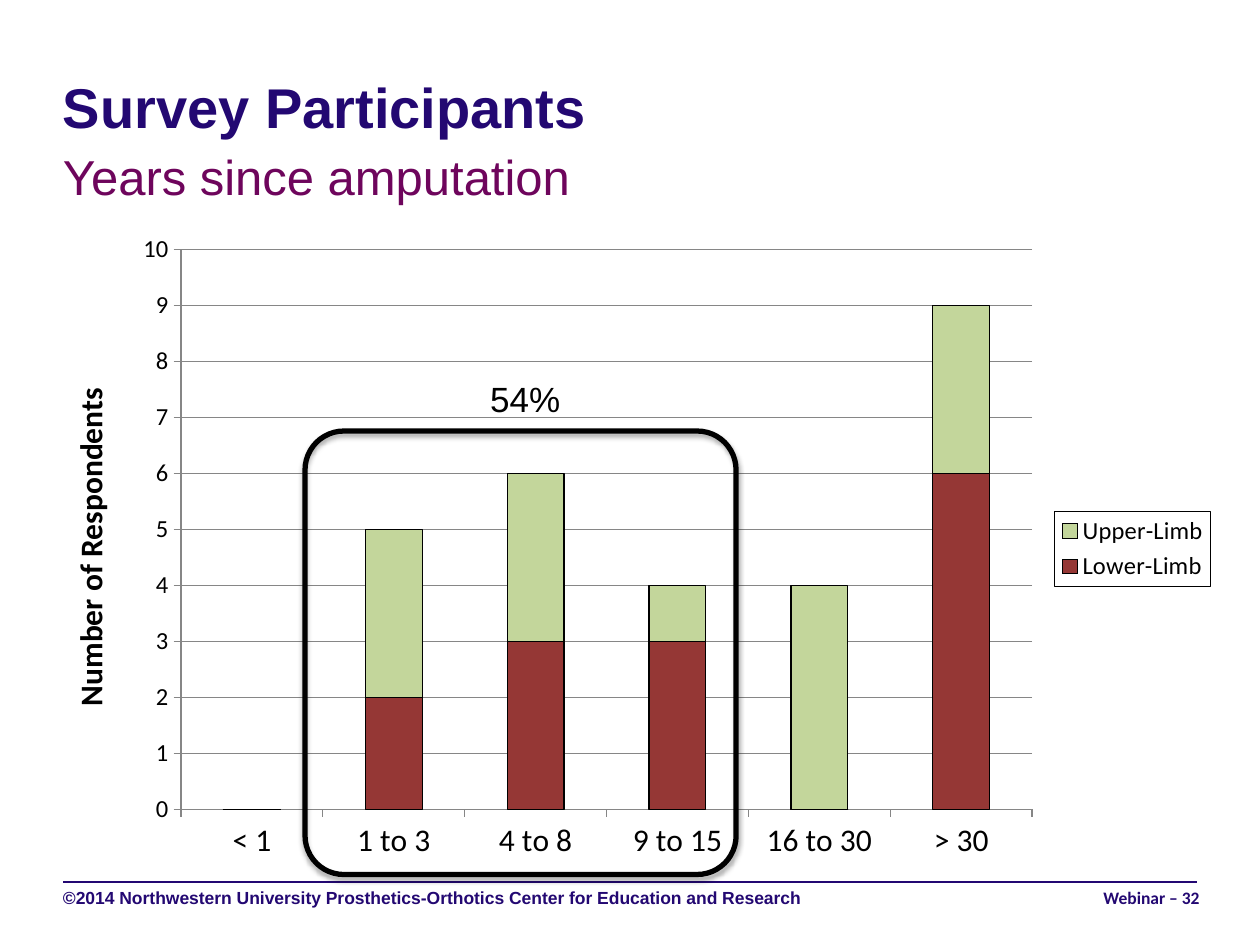
from lxml import etree
from pptx import Presentation
from pptx.chart.data import CategoryChartData
from pptx.dml.color import RGBColor
from pptx.enum.chart import XL_CHART_TYPE, XL_LEGEND_POSITION, XL_TICK_MARK
from pptx.enum.shapes import MSO_CONNECTOR, MSO_SHAPE
from pptx.enum.text import PP_ALIGN
from pptx.oxml import parse_xml
from pptx.oxml.ns import nsdecls, qn
from pptx.util import Cm, Pt

STACKED = XL_CHART_TYPE.COLUMN_STACKED
LEGEND_RIGHT = XL_LEGEND_POSITION.RIGHT
TICK_OUT = XL_TICK_MARK.OUTSIDE
STRAIGHT = MSO_CONNECTOR.STRAIGHT
ROUNDED = MSO_SHAPE.ROUNDED_RECTANGLE
LEFT, RIGHT = PP_ALIGN.LEFT, PP_ALIGN.RIGHT

NAVY = RGBColor(0x23, 0x08, 0x72)
PLUM = RGBColor(0x6E, 0x05, 0x5C)
BLACK = RGBColor(0, 0, 0)
GRAY = RGBColor(0x86, 0x86, 0x86)
RED = RGBColor(0x95, 0x37, 0x35)
GREEN = RGBColor(0xC3, 0xD6, 0x9B)

YEARS = ["< 1", "1 to 3", "4 to 8", "9 to 15", "16 to 30", "> 30"]
LIMBS = [
    ("Lower-Limb", [0, 2, 3, 3, 0, 6], RED),
    ("Upper-Limb", [0, 3, 3, 1, 4, 3], GREEN),
]
PLOT = {"x": 0.12, "y": 0.04, "w": 0.72, "h": 0.86}
PLAIN = (0.25, 0.13, 0.25, 0.13)
FLUSH = (0, 0, 0, 0)
FOOT = (0, 0.08, 0, 0)


class Page:
    face = "Arial"
    data_face = "Calibri"

    def __init__(self, slide):
        self.slide = slide
        self.shapes = slide.shapes

    def style(self, font, size, color=BLACK, bold=False, face=None):
        font.name = face or self.face
        font.size = Pt(size)
        font.bold = bold
        font.color.rgb = color

    def text(self, words, box, size, color, bold=False, face=None,
             inset=PLAIN, align=LEFT, wrap=True):
        frame = self.shapes.add_textbox(*map(Cm, box)).text_frame
        frame.word_wrap = wrap
        (frame.margin_left, frame.margin_top,
         frame.margin_right, frame.margin_bottom) = map(Cm, inset)
        para = frame.paragraphs[0]
        para.alignment = align
        run = para.add_run()
        run.text = words
        self.style(run.font, size, color, bold, face)

    def rule(self, start, end, color, width):
        line = self.shapes.add_connector(STRAIGHT, *map(Cm, start + end))
        line.line.color.rgb = color
        line.line.width = Pt(width)
        etree.SubElement(line._element.spPr, qn("a:effectLst"))

    def frame(self, box, color, width, corner):
        """Draw an unfilled rounded outline with a soft shadow below it."""
        shape = self.shapes.add_shape(ROUNDED, *map(Cm, box))
        shape.adjustments[0] = corner
        shape.fill.background()
        shape.line.color.rgb = color
        shape.line.width = Pt(width)
        shape.shadow.inherit = False
        effects = shape._element.spPr.find(qn("a:effectLst"))
        effects.append(parse_xml(
            f'<a:outerShdw {nsdecls("a")} blurRad="{Pt(3.1)}" dist="{Pt(1.8)}"'
            f' dir="5400000" rotWithShape="0"><a:srgbClr val="{color}">'
            '<a:alpha val="35000"/></a:srgbClr></a:outerShdw>'))

    def axis(self, axis, size):
        axis.major_tick_mark = TICK_OUT
        axis.format.line.color.rgb = GRAY
        self.style(axis.tick_labels.font, size, face=self.data_face)

    def chart(self, box, cats, series, title):
        data = CategoryChartData()
        data.categories = cats
        for name, vals, _ in series:
            data.add_series(name, vals)
        chart = self.shapes.add_chart(STACKED, *map(Cm, box), data).chart
        chart.has_title = False
        self.style(chart.font, 10, face=self.data_face)

        plot = chart.plots[0]
        plot.gap_width, plot.overlap = 150, 100
        plot.vary_by_categories = False
        for item, (_, _, color) in zip(plot.series, series):
            item.format.fill.solid()
            item.format.fill.fore_color.rgb = color
            item.format.line.color.rgb = BLACK
            item.format.line.width = Pt(0.75)

        self.axis(chart.category_axis, 18)
        scale = chart.value_axis
        self.axis(scale, 14)
        scale.minimum_scale, scale.maximum_scale, scale.major_unit = 0, 10, 1
        scale.major_gridlines.format.line.color.rgb = GRAY
        run = scale.axis_title.text_frame.paragraphs[0].add_run()
        run.text = title
        self.style(run.font, 18, bold=True, face=self.data_face)

        chart.has_legend = True
        legend = chart.legend
        legend.position = LEGEND_RIGHT
        legend.include_in_layout = False
        self.style(legend.font, 14, face=self.data_face)
        legend._element.find(qn("c:txPr")).addprevious(parse_xml(
            f'<c:spPr {nsdecls("c", "a")}><a:ln w="{Pt(0.75)}"><a:solidFill>'
            f'<a:srgbClr val="{BLACK}"/></a:solidFill></a:ln></c:spPr>'))
        self.place(chart)

    def place(self, chart):
        """Fix the inner plot area as fractions of the chart."""
        area = chart._chartSpace.chart.plotArea
        for old in area.findall(qn("c:layout")):
            area.remove(old)
        sizes = "".join(f'<c:{k} val="{v}"/>' for k, v in PLOT.items())
        area.insert(0, parse_xml(
            f'<c:layout {nsdecls("c")}><c:manualLayout>'
            '<c:layoutTarget val="inner"/><c:xMode val="edge"/>'
            f'<c:yMode val="edge"/>{sizes}</c:manualLayout></c:layout>'))


def main():
    deck = Presentation()
    deck.slide_width, deck.slide_height = Cm(25.4), Cm(19.05)
    page = Page(deck.slides.add_slide(deck.slide_layouts[6]))

    page.rule((1.27, 17.78), (24.13, 17.78), NAVY, 1)
    page.chart((0.79, 4.5, 23.83, 13.13), YEARS, LIMBS,
               "Number of Respondents")
    page.text("Survey Participants", (1.27, 1.47, 22.86, 1.37), 32, NAVY,
              bold=True, inset=FLUSH)
    page.text("©2014 Northwestern University Prosthetics-Orthotics Center "
              "for Education and Research", (1.27, 17.81, 16.94, 1.02),
              10, NAVY, bold=True, inset=FOOT)
    page.text("Years since amputation", (1.02, 2.82, 10.95, 1.45), 28, PLUM,
              wrap=False)
    page.frame((6.15, 8.69, 8.69, 8.94), BLACK, 3, 0.09)
    page.text("54%", (9.63, 7.49, 1.93, 1.12), 20, BLACK, wrap=False)
    page.text("Webinar – 32", (18.26, 17.81, 5.92, 1.02), 10, NAVY,
              bold=True, face=page.data_face, inset=FOOT, align=RIGHT)

    deck.save("out.pptx")


if __name__ == "__main__":
    main()
